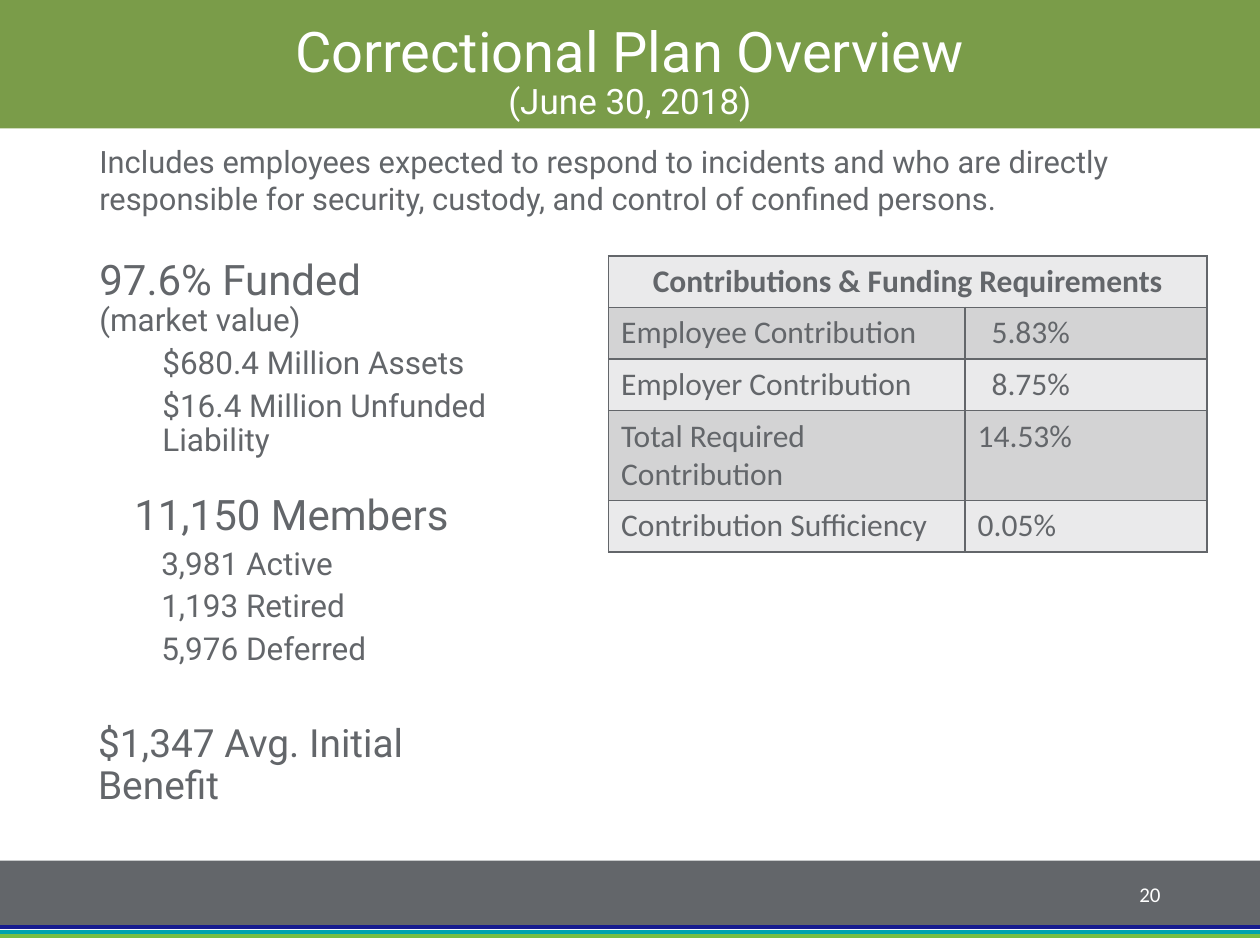
from dataclasses import dataclass

from lxml import etree
from pptx import Presentation
from pptx.dml.color import RGBColor
from pptx.enum.shapes import MSO_CONNECTOR, MSO_SHAPE
from pptx.enum.text import MSO_ANCHOR, MSO_AUTO_SIZE, PP_ALIGN
from pptx.oxml.ns import qn
from pptx.util import Emu, Inches, Pt

RECTANGLE = MSO_SHAPE.RECTANGLE
STRAIGHT = MSO_CONNECTOR.STRAIGHT
TOP, MIDDLE, BOTTOM = MSO_ANCHOR.TOP, MSO_ANCHOR.MIDDLE, MSO_ANCHOR.BOTTOM
LEFT, CENTER, RIGHT = PP_ALIGN.LEFT, PP_ALIGN.CENTER, PP_ALIGN.RIGHT
FIXED_SIZE = MSO_AUTO_SIZE.NONE

WIDTH, HEIGHT = Inches(10), Inches(7.5)
GRAY, GREEN, WHITE = "63666A", "7A9C49", "FFFFFF"
LIGHT_BAND, DARK_BAND = "EAEAEB", "D3D3D4"
HEADING_FONT, TABLE_FONT = "Roboto", "Calibri"


@dataclass(frozen=True)
class Area:
    """A rectangle in percent of the slide's width and height."""
    left: float
    top: float
    width: float
    height: float

    def emu(self) -> tuple:
        return (across(self.left), down(self.top),
                across(self.width), down(self.height))


@dataclass(frozen=True)
class Line:
    text: str
    size: float = 18
    level: int = 0
    align: PP_ALIGN = LEFT
    before: float = 0
    spacing: float = 0.9
    color: str = GRAY
    font: str = HEADING_FONT


@dataclass(frozen=True)
class Stripe:
    top: float
    color: str


@dataclass(frozen=True)
class Rate:
    label: str
    value: str
    indent: float = 0


def detail(text: str) -> Line:
    return Line(text, level=1, before=5)


STRIPES = [Stripe(98.13, "171C8F"), Stripe(98.67, "00A3AD"), Stripe(99.07, "78BE43")]
MEMBERS = [Line("11,150 Members", 24, align=RIGHT), detail("3,981 Active"),
           detail("1,193 Retired"), detail("5,976 Deferred")]
FUNDING = [Line("97.6% Funded", 24), Line("(market value)"),
           detail("$680.4 Million Assets"), detail("$16.4 Million Unfunded Liability")]
DESCRIPTION = [Line("Includes employees expected to respond to incidents and who are directly "
                    "responsible for security, custody, and control of confined persons.",
                    17.6, spacing=1)]
BENEFIT = [Line("$1,347 Avg. Initial Benefit", 22.2)]
PAGE_NUMBER = [Line("20", 12, align=RIGHT, spacing=1, color=WHITE, font=TABLE_FONT)]
RATES = [Rate("Employee Contribution", "5.83%", 0.11),
         Rate("Employer Contribution", "8.75%", 0.11),
         Rate("Total Required Contribution", "14.53%"),
         Rate("Contribution Sufficiency", "0.05%")]


def across(percent: float) -> Emu:
    return Emu(round(WIDTH * percent / 100))


def down(percent: float) -> Emu:
    return Emu(round(HEIGHT * percent / 100))


def paint(target, color: str) -> None:
    """Give a fill, or the fill of a line, one solid colour."""
    target.solid()
    target.fore_color.rgb = RGBColor.from_string(color)


def style(font, name: str, size: float, color: str, bold: bool = False) -> None:
    font.name, font.size, font.bold = name, Pt(size), bold
    font.color.rgb = RGBColor.from_string(color)


def indent(para, inches: float) -> None:
    properties = para._p.get_or_add_pPr()
    properties.set("marL", str(Inches(inches)))
    properties.set("indent", "0")


def add_bar(page, area: Area, color: str) -> None:
    bar = page.shapes.add_shape(RECTANGLE, *area.emu())
    bar.shadow.inherit = False
    paint(bar.fill, color)
    bar.line.fill.background()


def add_stripe(page, stripe: Stripe) -> None:
    top = down(stripe.top)
    line = page.shapes.add_connector(STRAIGHT, 0, top, WIDTH, top)
    paint(line.line.fill, stripe.color)
    line.line.width = Pt(2.5)
    etree.SubElement(line._element.spPr, qn("a:effectLst"))


def write_lines(box, lines: list[Line], anchor=TOP) -> None:
    frame = box.text_frame
    frame.word_wrap, frame.auto_size = True, FIXED_SIZE
    frame.vertical_anchor = anchor
    for number, line in enumerate(lines):
        para = frame.add_paragraph() if number else frame.paragraphs[0]
        para.text = line.text
        para.level, para.alignment = line.level, line.align
        para.line_spacing, para.space_before = line.spacing, Pt(line.before)
        indent(para, 0.5 * line.level)
        etree.SubElement(para._p.get_or_add_pPr(), qn("a:buNone"))
        style(para.font, line.font, line.size, line.color)


def add_text(page, area: Area, lines: list[Line], anchor=TOP) -> None:
    write_lines(page.shapes.add_textbox(*area.emu()), lines, anchor)


def place(shape, area: Area) -> None:
    shape.left, shape.top, shape.width, shape.height = area.emu()


def write_title(title) -> None:
    place(title, Area(0, 0, 100, 13.6))
    paint(title.fill, GREEN)
    frame = title.text_frame
    frame.auto_size, frame.vertical_anchor = FIXED_SIZE, BOTTOM
    para = frame.paragraphs[0]
    para.alignment, para.line_spacing = CENTER, 0.9
    style(para.font, HEADING_FONT, 32, WHITE)
    para.add_run().text = "Correctional Plan Overview"
    para.add_line_break()
    date = para.add_run()
    date.text = "(June 30, 2018)"
    date.font.size = Pt(20)


def fill_cell(cell, text: str, band: str, bold: bool = False):
    paint(cell.fill, band)
    cell.text = text
    para = cell.text_frame.paragraphs[0]
    style(para.font, TABLE_FONT, 18, GRAY, bold)
    return para


def add_borders(cell) -> None:
    properties = cell._tc.get_or_add_tcPr()
    for position, side in enumerate(("lnL", "lnR", "lnT", "lnB")):
        border = etree.Element(qn(f"a:{side}"), w=str(Pt(1)))
        fill = etree.SubElement(border, qn("a:solidFill"))
        etree.SubElement(fill, qn("a:srgbClr"), val=GRAY)
        properties.insert(position, border)


def add_rates(page, area: Area) -> None:
    table = page.shapes.add_table(len(RATES) + 1, 2, *area.emu()).table
    table.first_row = table.horz_banding = False
    table.columns[0].width, table.columns[1].width = across(28.3), across(19.2)
    heading = table.cell(0, 0)
    heading.merge(table.cell(0, 1))
    fill_cell(heading, "Contributions & Funding Requirements", LIGHT_BAND, True).alignment = CENTER
    for row, rate in enumerate(RATES, 1):
        band = DARK_BAND if row % 2 else LIGHT_BAND
        fill_cell(table.cell(row, 0), rate.label, band)
        indent(fill_cell(table.cell(row, 1), rate.value, band), rate.indent)
    for cell in table.iter_cells():
        add_borders(cell)


def main() -> None:
    deck = Presentation()
    deck.slide_width, deck.slide_height = WIDTH, HEIGHT
    page = deck.slides.add_slide(deck.slide_layouts[1])
    write_title(page.shapes.title)
    members = page.placeholders[1]
    place(members, Area(6.8, 51.6, 29.8, 24.4))
    write_lines(members, MEMBERS)
    add_bar(page, Area(0, 91.07, 100, 8.93), GRAY)
    add_bar(page, Area(0, 98.13, 100, 1.87), WHITE)
    for stripe in STRIPES:
        add_stripe(page, stripe)
    add_text(page, Area(6.9, 14.13, 86.3, 9.47), DESCRIPTION, BOTTOM)
    add_text(page, Area(6.9, 26.8, 34.8, 25.47), FUNDING)
    add_rates(page, Area(48.3, 27.07, 47.5, 27.33))
    add_text(page, Area(6.8, 76, 36.5, 6.67), BENEFIT)
    add_text(page, Area(70.6, 92, 22.5, 5.33), PAGE_NUMBER, MIDDLE)
    deck.save("out.pptx")


if __name__ == "__main__":
    main()
